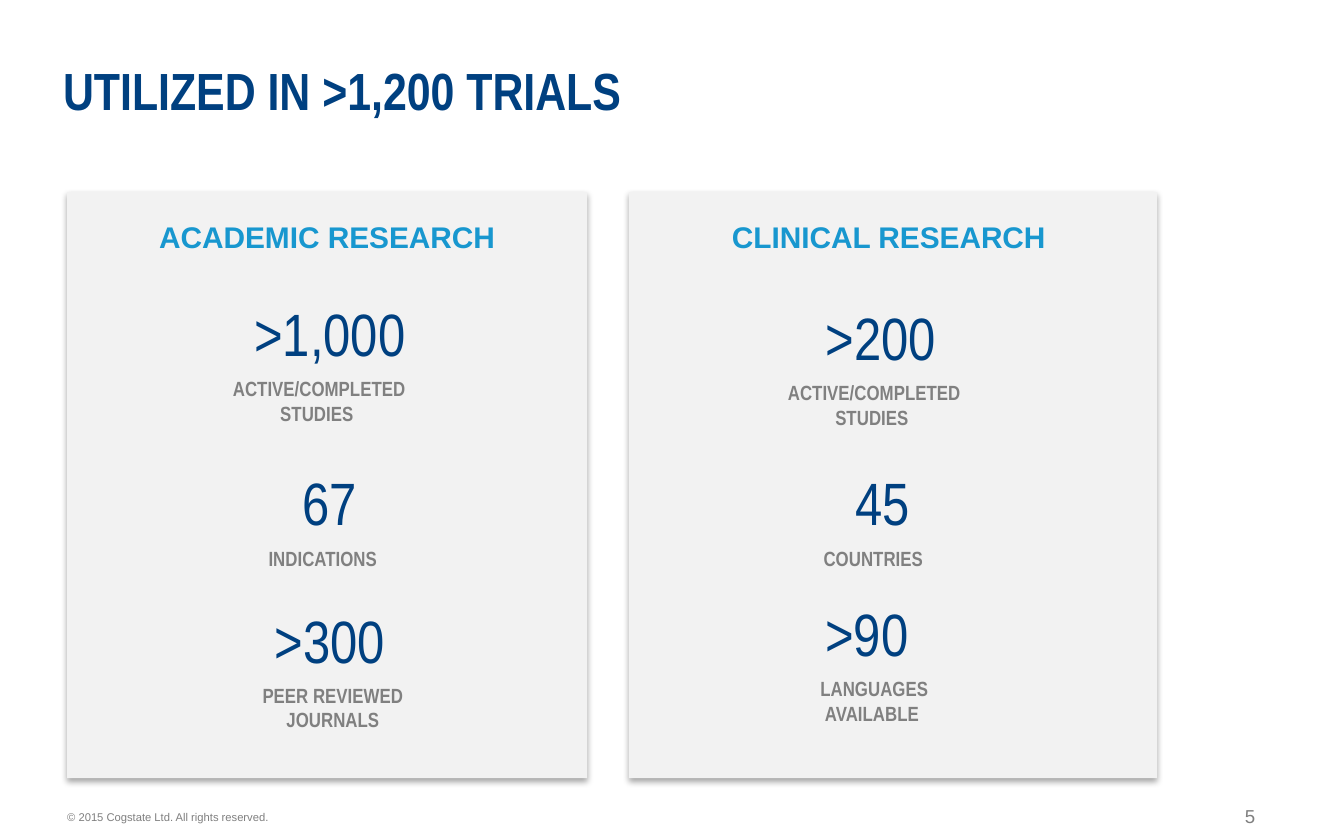
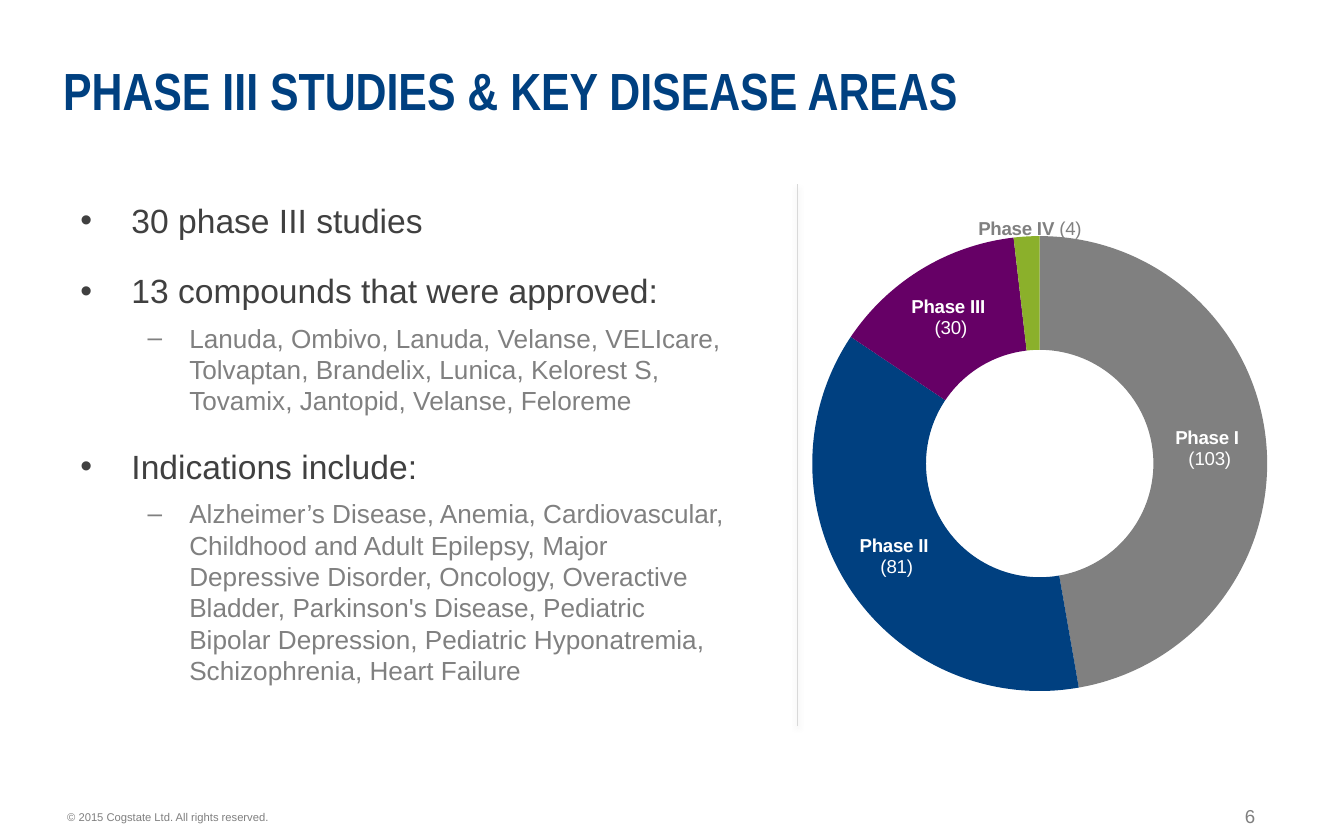
from dataclasses import dataclass

from lxml.etree import fromstring
from pptx import Presentation
from pptx.chart.data import CategoryChartData
from pptx.dml.color import RGBColor
from pptx.enum.chart import XL_CHART_TYPE
from pptx.enum.dml import MSO_LINE
from pptx.enum.shapes import MSO_CONNECTOR, MSO_SHAPE
from pptx.enum.text import MSO_ANCHOR, PP_ALIGN
from pptx.oxml.ns import nsdecls
from pptx.util import Inches, Pt

COPYRIGHT = "© 2015 Cogstate Ltd. All rights reserved."

CARDS = [
    {
        "heading": "ACADEMIC RESEARCH",
        "columns": (5, 38.7),
        "stats": [
            (">1,000", 21.6, (15.3, 18.5), "ACTIVE/COMPLETED STUDIES ", (15.3, 16.9), 13.7),
            ("67", 34.2, (15.3, 18.5), "INDICATIONS ", (16.3, 15.8), 4.6),
            (">300", 44.4, (15.3, 18.5), "PEER REVIEWED \vJOURNALS ", (17.8, 14.3), 13.7),
        ],
    },
    {
        "heading": "CLINICAL RESEARCH ",
        "columns": (46.8, 39.3),
        "stats": [
            (">200", 21.9, (56.3, 18.5), "ACTIVE/COMPLETED STUDIES ", (56.6, 16.9), 13.7),
            ("45", 34.2, (56.4, 18.5), "COUNTRIES ", (56.7, 16.9), 13.7),
            (">90", 43.9, (56.6, 15.8), "LANGUAGES AVAILABLE ", (56.6, 16.9), 13.7),
        ],
    },
]

POINTS = [
    ("point", "30 phase III studies"),
    ("point", "13 compounds that were approved:"),
    ("detail", "Lanuda, Ombivo, Lanuda, Velanse, VELIcare, Tolvaptan, "
               "Brandelix, Lunica, Kelorest S, Tovamix, Jantopid, Velanse, Feloreme"),
    ("point", "Indications include:"),
    ("detail", "Alzheimer’s Disease, Anemia, Cardiovascular, Childhood and Adult "
               "Epilepsy, Major Depressive Disorder, Oncology, Overactive Bladder, "
               "Parkinson's Disease, Pediatric Bipolar Depression, Pediatric "
               "Hyponatremia, Schizophrenia, Heart Failure"),
]

PHASES = [
    ("Phase I ", 103, "gray", "white"),
    ("Phase II ", 81, "navy", "white"),
    ("Phase III ", 30, "purple", "white"),
    ("Phase IV ", 4, "green", "gray"),
]


@dataclass(frozen=True)
class Theme:
    colors: dict
    styles: dict
    bullets: dict


THEME = Theme(
    colors={
        "navy": "004080", "sky": "1897CF", "gray": "808080", "footer": "7F7F7F",
        "ink": "404040", "card": "F2F2F2", "rule": "D9D9D9", "purple": "660066",
        "green": "8BB02B", "white": "FFFFFF", "black": "010101",
    },
    styles={
        "title": ("navy", {"name": "Arial Narrow", "size": Pt(28), "bold": True}),
        "heading": ("sky", {"name": "Arial", "size": Pt(16), "bold": True}),
        "value": ("navy", {"name": "Arial Narrow", "size": Pt(32)}),
        "label": ("gray", {"name": "Arial Narrow", "size": Pt(11), "bold": True}),
        "point": ("ink", {"name": "Arial", "size": Pt(18)}),
        "detail": ("gray", {"name": "Arial", "size": Pt(14)}),
        "page": ("footer", {"name": "Arial", "size": Pt(10)}),
        "copyright": ("footer", {"name": "Arial", "size": Pt(6)}),
        "chart": ("black", {"name": "Arial", "size": Pt(10)}),
    },
    bullets={
        "point": {"char": "•", "indent": 0.38, "hang": 0.38, "before": 10, "level": 0},
        "detail": {"char": "–", "indent": 0.81, "hang": 0.31, "before": 0, "level": 1},
    },
)

CELL = Inches(0.1)
COLUMNS, ROWS = 100, 62.5
CARD_TOP, CARD_ROWS = 14.3, 43.6
VALUE_ROWS, LABEL_DROP = 6.4, 5.9
CENTERED = {"alignment": PP_ALIGN.CENTER}
NO_INSETS = (0, 0, 0, 0)


def grid(*cells):
    return [round(cell * CELL) for cell in cells]


def color(name):
    return RGBColor.from_string(THEME.colors[name])


def set_all(target, values):
    for key, value in values.items():
        setattr(target, key, value)


def style_font(font, style, tint=None):
    default_tint, values = THEME.styles[style]
    set_all(font, values)
    font.color.rgb = color(tint or default_tint)


def add_run(paragraph, text, style):
    for index, line in enumerate(text.split("\v")):
        if index:
            paragraph.add_line_break()
        run = paragraph.add_run()
        run.text = line
        style_font(run.font, style)


def add_box(slide, box, insets=(0.1, 0.05, 0.1, 0.05), anchor=MSO_ANCHOR.TOP):
    frame = slide.shapes.add_textbox(*grid(*box)).text_frame
    sides = ("margin_left", "margin_top", "margin_right", "margin_bottom")
    set_all(frame, dict(zip(sides, map(Inches, insets))))
    set_all(frame, {"word_wrap": True, "vertical_anchor": anchor})
    return frame


def add_text(slide, box, text, style, layout=None, **options):
    paragraph = add_box(slide, box, **options).paragraphs[0]
    set_all(paragraph, layout or {})
    add_run(paragraph, text, style)


def add_shadow(shape, opacity, distance):
    shape._element.spPr.append(fromstring(
        f'<a:effectLst {nsdecls("a")}><a:outerShdw blurRad="{Pt(3.1)}" '
        f'dist="{Pt(distance)}" dir="5400000" rotWithShape="0">'
        f'<a:srgbClr val="000000"><a:alpha val="{opacity * 1000}"/></a:srgbClr>'
        '</a:outerShdw></a:effectLst>'))


def add_slide(deck, title, page):
    slide = deck.slides.add_slide(deck.slide_layouts[6])
    add_text(slide, (79.6, 59.9, 13.8, 1.7), str(page), "page",
             {"alignment": PP_ALIGN.RIGHT}, insets=NO_INSETS)
    add_text(slide, (5, 60.3, 23.5, 1), COPYRIGHT, "copyright", insets=NO_INSETS)
    add_text(slide, (3.5, 1.5, 90, 10.4), title, "title",
             insets=(0.12, 0.05, 0.1, 0.05), anchor=MSO_ANCHOR.MIDDLE)
    return slide


def add_card(slide, heading, columns, stats):
    left, width = columns
    card = slide.shapes.add_shape(
        MSO_SHAPE.RECTANGLE, *grid(left, CARD_TOP, width, CARD_ROWS))
    card.fill.solid()
    card.fill.fore_color.rgb = color("card")
    card.line.fill.background()
    add_shadow(card, 35, 1.8)
    add_text(slide, (left, CARD_TOP + 1.5, width, 3.7), heading, "heading", CENTERED)
    for value, top, value_span, label, label_span, label_rows in stats:
        add_text(slide, (value_span[0], top, value_span[1], VALUE_ROWS),
                 value, "value", CENTERED)
        add_text(slide, (label_span[0], top + LABEL_DROP, label_span[1], label_rows),
                 label, "label", {**CENTERED, "space_after": Pt(6)})


def add_points(slide):
    frame = add_box(slide, (5, 14.4, 50.1, 45.2))
    for index, (kind, text) in enumerate(POINTS):
        paragraph = frame.add_paragraph() if index else frame.paragraphs[0]
        bullet = THEME.bullets[kind]
        properties = paragraph._p.get_or_add_pPr()
        properties.set("marL", str(Inches(bullet["indent"])))
        properties.set("indent", str(-Inches(bullet["hang"])))
        for tag in ('buFont typeface="Arial"', f'buChar char="{bullet["char"]}"'):
            properties.append(fromstring(f'<a:{tag} {nsdecls("a")}/>'))
        set_all(paragraph, {
            "level": bullet["level"],
            "space_before": Pt(bullet["before"] if index else 0),
            "space_after": Pt(6),
        })
        add_run(paragraph, text, kind)


def manual_layout(**settings):
    parts = "".join(f'<c:{key} val="{value}"/>' for key, value in settings.items())
    return fromstring(f'<c:layout {nsdecls("c")}><c:manualLayout>{parts}'
                      '</c:manualLayout></c:layout>')


def label_phase(point, name, count, tint, outside):
    label = point.data_label
    paragraph = label.text_frame.paragraphs[0]
    for text, bold in ((name, True), (f"({count})", False)):
        if not bold and not outside:
            paragraph = label.text_frame.add_paragraph()
        run = paragraph.add_run()
        run.text = text
        style_font(run.font, "chart", tint)
        run.font.bold = bold
    if outside:
        label._get_or_add_dLbl().insert(1, manual_layout(x=0, y=-0.13))


def add_phase_chart(slide):
    data = CategoryChartData()
    data.categories = [phase[0].strip() for phase in PHASES]
    data.add_series("Series 1", [phase[1] for phase in PHASES])
    chart = slide.shapes.add_chart(
        XL_CHART_TYPE.DOUGHNUT, *grid(53.9, 16.1, 47.4, 36.8), data).chart
    set_all(chart, {"has_legend": False, "has_title": False})
    style_font(chart.font, "chart")
    plot = chart.plots[0]
    plot.vary_by_categories = True
    plot._element.xpath("c:holeSize")[0].set("val", "50")
    area = chart._chartSpace.chart.plotArea
    for old in area.xpath("c:layout"):
        area.remove(old)
    area.insert(0, manual_layout(layoutTarget="inner", xMode="edge", yMode="edge",
                                 x=0.13, y=0.04, w=0.73, h=0.92))
    series = plot.series[0]
    set_all(series.data_labels, {"show_value": True, "show_category_name": True})
    for index, (name, count, fill, tint) in enumerate(PHASES):
        point = series.points[index]
        point.format.fill.solid()
        point.format.fill.fore_color.rgb = color(fill)
        point.format.line.fill.background()
        label_phase(point, name, count, tint, outside=tint != "white")


def add_divider(slide):
    divider = slide.shapes.add_connector(
        MSO_CONNECTOR.STRAIGHT, *grid(59.3, 13.7, 59.3, 54))
    divider.line.color.rgb = color("rule")
    set_all(divider.line, {"width": Pt(0.25), "dash_style": MSO_LINE.ROUND_DOT})
    add_shadow(divider, 38, 1.6)


def main():
    deck = Presentation()
    set_all(deck, {"slide_width": COLUMNS * CELL, "slide_height": round(ROWS * CELL)})

    trials = add_slide(deck, "UTILIZED IN >1,200 TRIALS", 5)
    for card in CARDS:
        add_card(trials, **card)

    phases = add_slide(deck, "PHASE III STUDIES & KEY DISEASE AREAS", 6)
    add_points(phases)
    add_phase_chart(phases)
    add_divider(phases)

    deck.save("out.pptx")


if __name__ == "__main__":
    main()
